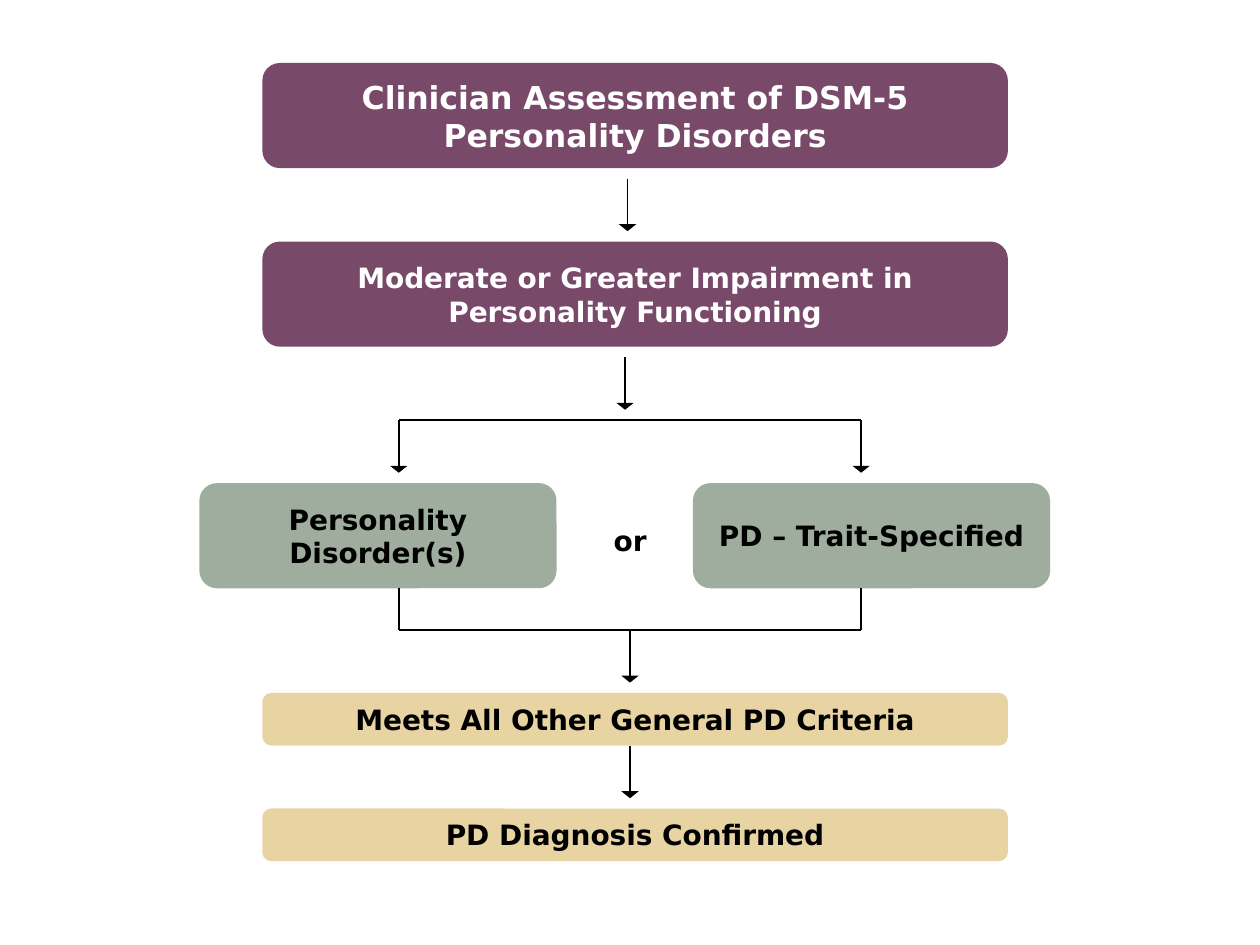
from lxml.etree import SubElement
from pptx import Presentation
from pptx.dml.color import RGBColor
from pptx.enum.shapes import MSO_CONNECTOR, MSO_SHAPE
from pptx.enum.text import MSO_ANCHOR, PP_ALIGN
from pptx.oxml.ns import qn
from pptx.util import Cm, Pt

FONT = "DejaVu Sans"
PLUM, SAGE, SAND = "79496A", "9FAD9E", "E8D3A2"
WHITE, BLACK = "FFFFFF", "000000"

WIDE_LEFT, WIDE = 5.29, 15.03
OPTION_WIDTH = 7.2
TALL, SHORT = 2.12, 1.06
OPTION_TOP = 9.74

STEPS = [
    ("Clinician Assessment of DSM-5 Personality Disorders", 1.27, TALL, PLUM, WHITE, 18),
    ("Moderate or Greater Impairment in Personality Functioning", 4.87, TALL, PLUM, WHITE, 16),
    ("Meets All Other General PD Criteria", 13.97, SHORT, SAND, BLACK, 16),
    ("PD Diagnosis Confirmed", 16.3, SHORT, SAND, BLACK, 16),
]
OPTIONS = [("Personality Disorder(s)", 4.02), ("PD – Trait-Specified", 13.97)]

BRANCHES = (8.04, 17.36)
SPLIT_Y, MERGE_Y = 8.47, 12.7
ARROW_LENGTH = 1.06
ARROWS = [(12.65, 3.6), (12.6, 7.2), (12.7, MERGE_Y), (12.7, 15.03)]


def color(value):
    return RGBColor.from_string(value)


def add_box(text, left, top, width, height, fill, ink, size=16, align=PP_ALIGN.CENTER):
    box = slide.shapes.add_shape(
        MSO_SHAPE.FLOWCHART_ALTERNATE_PROCESS, Cm(left), Cm(top), Cm(width), Cm(height)
    )
    box.shadow.inherit = False
    box.line.fill.background()
    if fill:
        box.fill.solid()
        box.fill.fore_color.rgb = color(fill)
    else:
        box.fill.background()
    frame = box.text_frame
    frame.text = text
    frame.word_wrap = True
    frame.vertical_anchor = MSO_ANCHOR.MIDDLE
    paragraph = frame.paragraphs[0]
    paragraph.alignment = align
    font = paragraph.runs[0].font
    font.name, font.size, font.bold = FONT, Pt(size), True
    font.color.rgb = color(ink)


def add_line(x1, y1, x2, y2, arrow=False):
    line = slide.shapes.add_connector(
        MSO_CONNECTOR.STRAIGHT, Cm(x1), Cm(y1), Cm(x2), Cm(y2)
    )
    line.line.width = Pt(1)
    line.line.color.rgb = color(BLACK)
    if arrow:
        SubElement(line.line._get_or_add_ln(), qn("a:tailEnd"), type="triangle", w="lg", len="sm")
    SubElement(line._element.spPr, qn("a:effectLst"))


presentation = Presentation()
presentation.slide_width, presentation.slide_height = Cm(25.4), Cm(19.05)
slide = presentation.slides.add_slide(presentation.slide_layouts[6])

for text, top, height, fill, ink, size in STEPS:
    add_box(text, WIDE_LEFT, top, WIDE, height, fill, ink, size)
for text, left in OPTIONS:
    add_box(text, left, OPTION_TOP, OPTION_WIDTH, TALL, SAGE, BLACK)
add_box("or", 12.07, 10.37, 1.7, SHORT, None, BLACK, align=PP_ALIGN.LEFT)

for x, y in ARROWS + [(branch, SPLIT_Y) for branch in BRANCHES]:
    add_line(x, y, x, y + ARROW_LENGTH, arrow=True)
for branch in BRANCHES:
    add_line(branch, OPTION_TOP + TALL, branch, MERGE_Y)
for y in (SPLIT_Y, MERGE_Y):
    add_line(BRANCHES[0], y, BRANCHES[1], y)

presentation.save("out.pptx")
